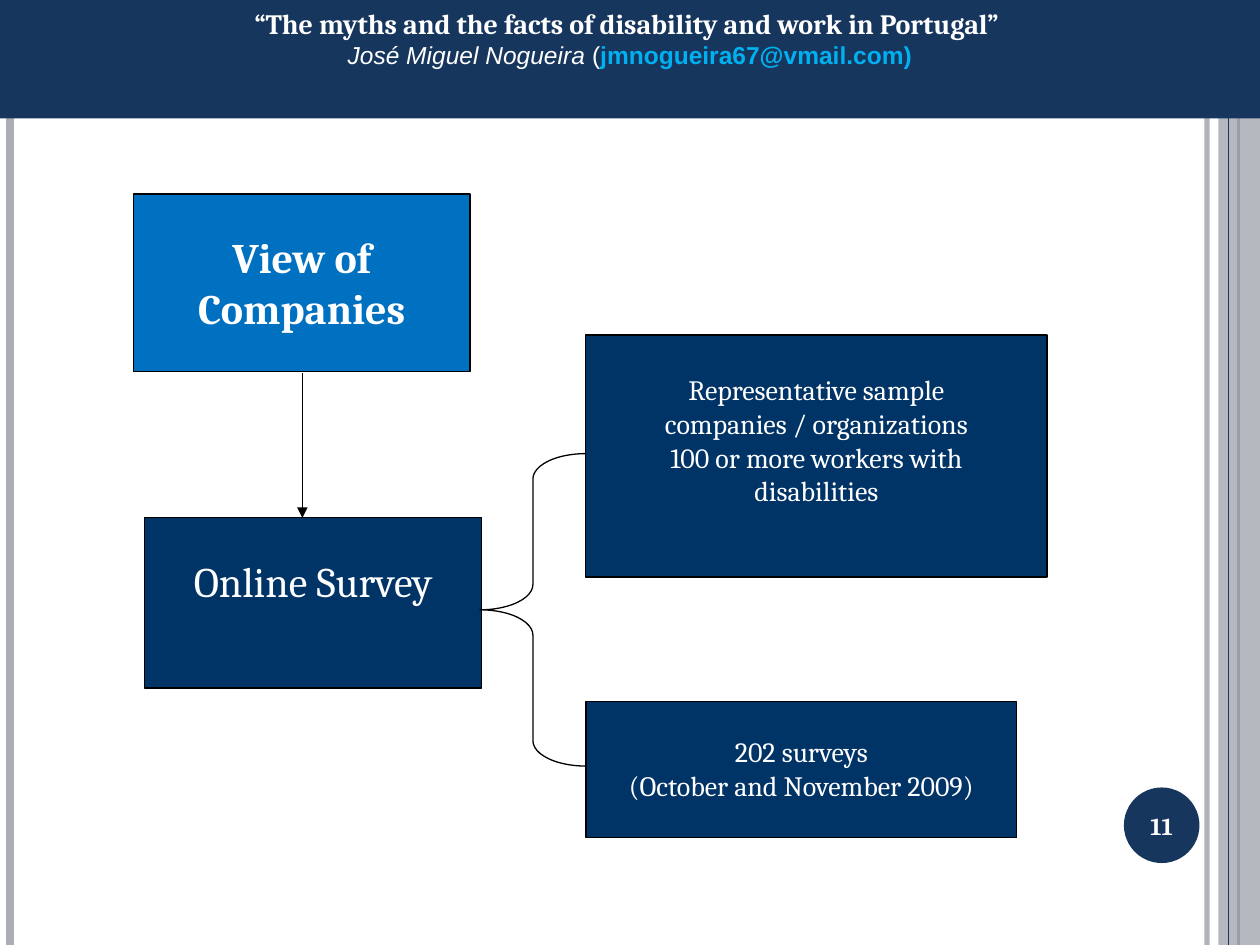
from lxml.etree import SubElement
from pptx import Presentation
from pptx.dml.color import RGBColor
from pptx.enum.shapes import MSO_CONNECTOR, MSO_SHAPE
from pptx.enum.text import MSO_ANCHOR, PP_ALIGN
from pptx.oxml.ns import qn
from pptx.util import Inches, Pt

NAVY, DEEP_BLUE, BLUE, CYAN = "17365D", "003366", "0070C0", "00B0F0"
GREY, BLACK, WHITE = "ACAEB6", "000000", "FFFFFF"


def rgb(hex_value):
    return RGBColor.from_string(hex_value)


def set_opacity(fill, percent):
    """Make a solid fill translucent."""
    color = fill._xPr.find(qn("a:solidFill"))[0]
    SubElement(color, qn("a:alpha")).set("val", str(percent * 1000))


class SlideBuilder:
    """Holds the shared style and the current slide."""

    text_format = {"name": "Cambria", "size": 16, "color": WHITE,
                   "bold": False, "italic": False}

    def __init__(self, slide):
        self.slide = slide

    def line(self, start, end, color, width, opacity=None, arrow=False):
        points = [Inches(value) for value in (*start, *end)]
        connector = self.slide.shapes.add_connector(MSO_CONNECTOR.STRAIGHT, *points)
        connector.line.width = Pt(width)
        connector.line.color.rgb = rgb(color)
        if opacity:
            set_opacity(connector.line.fill, opacity)
        if arrow:
            SubElement(connector.line._ln, qn("a:tailEnd")).set("type", "triangle")
        SubElement(connector._element.spPr, qn("a:effectLst"))
        return connector

    def shape(self, kind, box, fill=None, outline=None, opacity=None):
        shape = self.slide.shapes.add_shape(kind, *[Inches(value) for value in box])
        shape.shadow.inherit = False
        if fill:
            shape.fill.solid()
            shape.fill.fore_color.rgb = rgb(fill)
            if opacity:
                set_opacity(shape.fill, opacity)
        else:
            shape.fill.background()
        if outline:
            shape.line.color.rgb = rgb(outline)
            shape.line.width = Pt(0.75)
        else:
            shape.line.fill.background()
        return shape

    def text(self, shape, paragraphs, anchor=MSO_ANCHOR.TOP, top=0, side=0):
        """Write paragraphs, each a list of (text, format) runs."""
        frame = shape.text_frame
        settings = {"word_wrap": True, "vertical_anchor": anchor,
                    "margin_top": Inches(top), "margin_bottom": 0,
                    "margin_left": Inches(side), "margin_right": Inches(side)}
        for key, value in settings.items():
            setattr(frame, key, value)
        for index, runs in enumerate(paragraphs):
            paragraph = frame.add_paragraph() if index else frame.paragraphs[0]
            paragraph.alignment = PP_ALIGN.CENTER
            for words, changes in runs:
                run = paragraph.add_run()
                run.text = words
                self.format(run.font, {**self.text_format, **changes})

    def format(self, font, values):
        for key, value in values.items():
            if key == "color":
                font.color.rgb = rgb(value)
            else:
                setattr(font, key, Pt(value) if key == "size" else value)

    def diagram_box(self, box, fill, lines, top, **changes):
        shape = self.shape(MSO_SHAPE.RECTANGLE, box, fill, BLACK)
        self.text(shape, [[(words, changes)] for words in lines], top=top)
        return shape


def main():
    presentation = Presentation()
    presentation.slide_width = Inches(10)
    presentation.slide_height = Inches(7.5)
    builder = SlideBuilder(presentation.slides.add_slide(presentation.slide_layouts[6]))

    # Vertical stripes at both edges
    def stripe(x, color, width, opacity=None):
        builder.line((x, 0), (x, 7.5), color, width, opacity)

    stripe(9.58, GREY, 3, 93)
    stripe(0.08, GREY, 4.5)
    stripe(9.83, NAVY, 1.5)
    builder.shape(MSO_SHAPE.RECTANGLE, (9.67, 0, 0.33, 7.5), GREY, opacity=87)
    stripe(9.75, NAVY, 0.75)

    # Slide number
    number_badge = builder.shape(MSO_SHAPE.OVAL, (8.92, 6.25, 0.6, 0.6), NAVY)
    builder.text(number_badge, [[("11", {"size": 14, "bold": True})]], MSO_ANCHOR.MIDDLE)

    # Diagram boxes
    builder.diagram_box((1.06, 1.54, 2.67, 1.41), BLUE, ["View of Companies"],
                        top=0.3, size=24, bold=True)
    builder.diagram_box((1.15, 4.11, 2.67, 1.35), DEEP_BLUE, ["Online Survey"],
                        top=0.3, size=24)
    builder.diagram_box((4.65, 2.66, 3.66, 1.92), DEEP_BLUE,
                        ["Representative sample", "companies / organizations",
                         "100 or more workers with", "disabilities"], top=0.3)
    builder.diagram_box((4.65, 5.57, 3.42, 1.08), DEEP_BLUE,
                        ["202 surveys", "(October and November 2009)"], top=0.26)

    # Brace and arrow between the boxes
    brace = builder.shape(MSO_SHAPE.LEFT_BRACE, (3.81, 3.6, 0.84, 2.48), outline=BLACK)
    brace.adjustments[0] = 0.24
    builder.line((2.4, 2.96), (2.4, 4.11), BLACK, 1, arrow=True)

    # Header band
    header = builder.shape(MSO_SHAPE.RECTANGLE, (0, 0, 10, 0.94), NAVY)
    author = {"name": "Arial", "size": 14}
    builder.text(header, [
        [("“The myths and the facts of disability and work in Portugal” ", {"bold": True})],
        [("José Miguel Nogueira ", {**author, "italic": True}),
         ("(", author),
         ("jmnogueira67@vmail.com)", {**author, "bold": True, "color": CYAN})],
    ], top=0.05, side=0.1)

    presentation.save("out.pptx")


if __name__ == "__main__":
    main()
